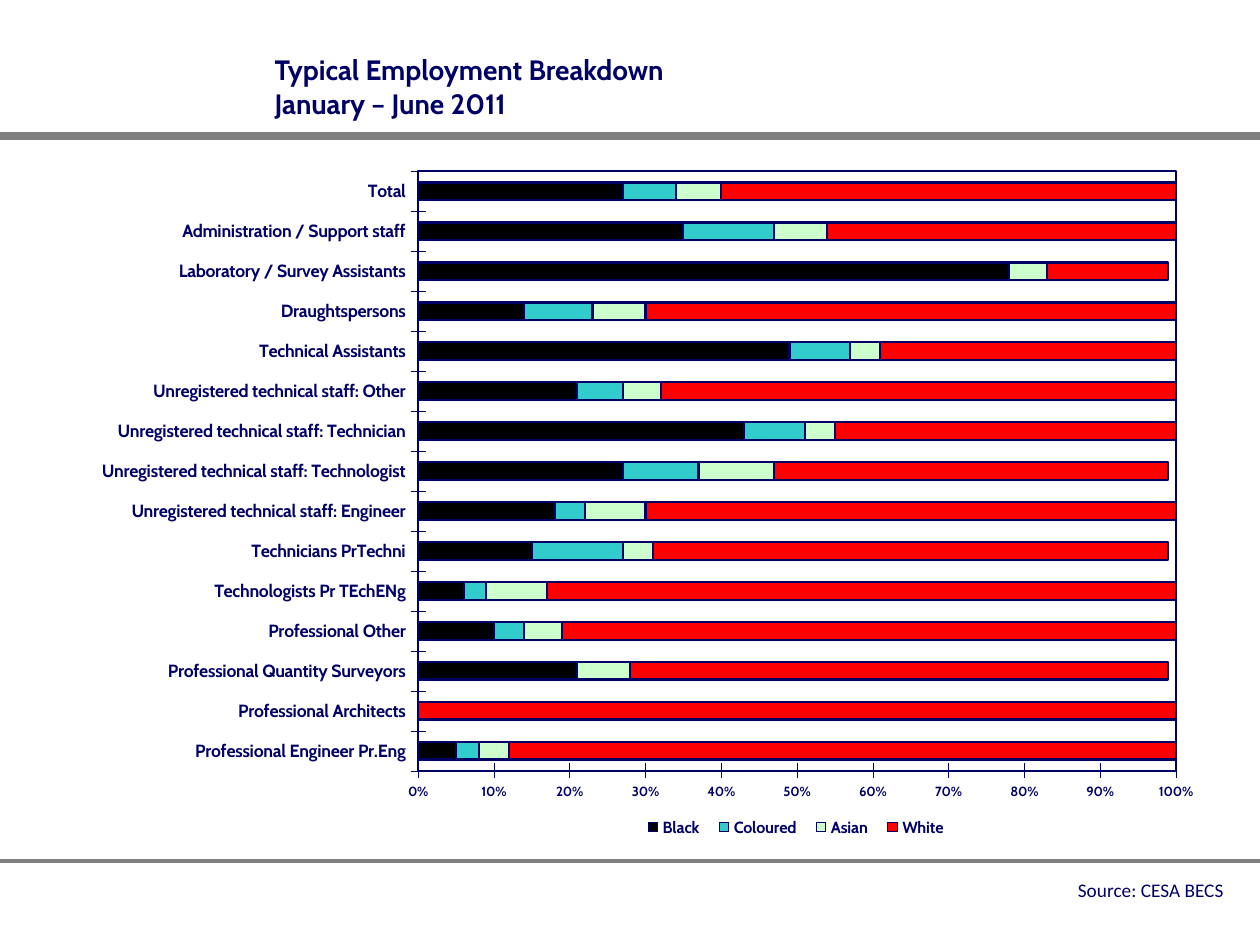
from lxml import etree
from pptx import Presentation
from pptx.chart.data import CategoryChartData
from pptx.dml.color import RGBColor
from pptx.enum.chart import XL_CHART_TYPE as ChartType
from pptx.enum.chart import XL_LEGEND_POSITION as LegendPosition
from pptx.enum.chart import XL_TICK_MARK as TickMark
from pptx.enum.shapes import MSO_CONNECTOR as Connector
from pptx.enum.text import MSO_ANCHOR as Anchor
from pptx.enum.text import MSO_AUTO_SIZE as AutoSize
from pptx.enum.text import PP_ALIGN as Align
from pptx.oxml import parse_xml
from pptx.oxml.ns import nsdecls, qn
from pptx.util import Pt

CATEGORIES = [
    "Professional Engineer Pr.Eng", "Professional Architects",
    "Professional Quantity Surveyors", "Professional Other",
    "Technologists Pr TEchENg", "Technicians PrTechni",
    "Unregistered technical staff: Engineer",
    "Unregistered technical staff: Technologist",
    "Unregistered technical staff: Technician",
    "Unregistered technical staff: Other", "Technical Assistants",
    "Draughtspersons", "Laboratory / Survey Assistants",
    "Administration / Support staff", "Total",
]
SERIES = [
    ("Black", "000000", [0.05, 0, 0.21, 0.1, 0.06, 0.15, 0.18, 0.27,
                         0.43, 0.21, 0.49, 0.14, 0.78, 0.35, 0.27]),
    ("Coloured", "33CCCC", [0.03, 0, 0, 0.04, 0.03, 0.12, 0.04, 0.1,
                            0.08, 0.06, 0.08, 0.09, 0, 0.12, 0.07]),
    ("Asian", "CCFFCC", [0.04, 0, 0.07, 0.05, 0.08, 0.04, 0.08, 0.1,
                         0.04, 0.05, 0.04, 0.07, 0.05, 0.07, 0.06]),
    ("White", "FF0000", [0.88, 1, 0.71, 0.82, 0.84, 0.68, 0.7, 0.52,
                         0.45, 0.68, 0.39, 0.7, 0.16, 0.46, 0.6]),
]


def px(length):
    """Turn pixels into EMU."""
    return round(length * 914400 / 126)


def color(value):
    """Turn a hex string into a colour."""
    return RGBColor.from_string(value)


def style_font(font, size, ink, name, bold=False):
    """Set size, colour, face and weight of a font."""
    font.size, font.name, font.bold = Pt(size), name, bold
    font.color.rgb = color(ink)


def style_line(line, ink, width):
    """Set colour and width of a line."""
    line.color.rgb = color(ink)
    line.width = Pt(width)


def write(frame, text, align=Align.LEFT, **style):
    """Write text into the first paragraph, breaking at each newline."""
    para = frame.paragraphs[0]
    para.alignment = align
    for index, words in enumerate(text.split("\n")):
        if index:
            para.add_line_break()
        span = para.add_run()
        span.text = words
        style_font(span.font, **style)


def place(element, index, left, top, width, height, inner=False):
    """Give a chart part a manual layout in fractions of the chart."""
    for old in element.findall(qn("c:layout")):
        element.remove(old)
    target = '<c:layoutTarget val="inner"/>' if inner else ""
    sizes = "".join(f'<c:{tag} val="{value}"/>' for tag, value in
                    zip("xywh", (left, top, width, height)))
    element.insert(index, parse_xml(
        f'<c:layout {nsdecls("c")}><c:manualLayout>{target}'
        f'<c:xMode val="edge"/><c:yMode val="edge"/>{sizes}'
        '</c:manualLayout></c:layout>'))


class SlideBuilder:
    """Hold the style and the current slide."""

    ink, rule, face = "000066", "808080", "Cabin"

    def __init__(self, page):
        self.page = page

    def title(self, text, left, top, width, height):
        """Place and format the title."""
        box = self.page.shapes.title
        box.left, box.top, box.width, box.height = map(
            px, (left, top, width, height))
        box.text_frame.vertical_anchor = Anchor.BOTTOM
        box.text_frame.word_wrap = True
        write(box.text_frame, text, size=16, ink=self.ink, name=self.face,
              bold=True)

    def divider(self, top, width):
        """Draw a grey rule across the slide."""
        line = self.page.shapes.add_connector(
            Connector.STRAIGHT, 0, px(top), px(1260), px(top))
        style_line(line.line, self.rule, width)
        etree.SubElement(line.element.spPr, qn("a:effectLst"))

    def label(self, text, left, top, width, height):
        """Add a right-aligned single-line label."""
        box = self.page.shapes.add_textbox(
            *map(px, (left, top, width, height)))
        box.text_frame.word_wrap = False
        box.text_frame.auto_size = AutoSize.SHAPE_TO_FIT_TEXT
        write(box.text_frame, text, Align.RIGHT, size=11, ink=self.ink,
              name="Calibri")

    def axis(self, axis, size):
        """Format one chart axis."""
        axis.has_major_gridlines = False
        axis.major_tick_mark = TickMark.CROSS
        axis.minor_tick_mark = TickMark.NONE
        style_line(axis.format.line, self.ink, 0.3)
        style_font(axis.tick_labels.font, size, self.ink, self.face, True)

    def stacked_bars(self, left, top, width, height):
        """Add the stacked bar chart of staff shares."""
        data = CategoryChartData(number_format="0%")
        data.categories = CATEGORIES
        for name, _, values in SERIES:
            data.add_series(name, values)
        chart = self.page.shapes.add_chart(
            ChartType.BAR_STACKED, *map(px, (left, top, width, height)),
            data).chart
        chart.has_title = False
        style_font(chart.font, 23.2, self.ink, self.face, True)
        self.axis(chart.category_axis, 10.1)
        self.axis(chart.value_axis, 7.6)
        scale = chart.value_axis
        scale.minimum_scale, scale.maximum_scale = 0, 1
        scale.major_unit = 0.1
        scale.tick_labels.number_format = "0%"
        scale.tick_labels.number_format_is_linked = False

        plot = chart.plots[0]
        plot.overlap, plot.gap_width = 100, 130
        plot.vary_by_categories = False
        for series, (_, fill, _) in zip(plot.series, SERIES):
            series.format.fill.solid()
            series.format.fill.fore_color.rgb = color(fill)
            style_line(series.format.line, self.ink, 1.22)

        chart.has_legend = True
        legend = chart.legend
        legend.position = LegendPosition.BOTTOM
        legend.include_in_layout = False
        style_font(legend.font, 9.2, self.ink, self.face, True)
        area = chart.element.find(".//" + qn("c:plotArea"))
        place(area, 0, 0.341, 0.025, 0.63, 0.864, inner=True)
        place(chart.element.find(".//" + qn("c:legend")), 1,
              0.52, 0.96, 0.27, 0.03)
        area.append(parse_xml(
            f'<c:spPr {nsdecls("c", "a")}><a:noFill/><a:ln w="{Pt(1.22)}">'
            f'<a:solidFill><a:srgbClr val="{self.ink}"/></a:solidFill>'
            '</a:ln></c:spPr>'))


def main():
    """Build the slide and save the deck."""
    deck = Presentation()
    deck.slide_width, deck.slide_height = px(1260), px(945)
    builder = SlideBuilder(deck.slides.add_slide(deck.slide_layouts[5]))
    builder.divider(136, 5)
    builder.divider(861, 2)
    builder.title("Typical Employment Breakdown\nJanuary – June 2011",
                  262, 32, 955, 94)
    builder.stacked_bars(8, 154, 1203, 694)
    builder.label("Source: CESA BECS", 1063, 872, 173, 37)
    deck.save("out.pptx")


if __name__ == "__main__":
    main()
